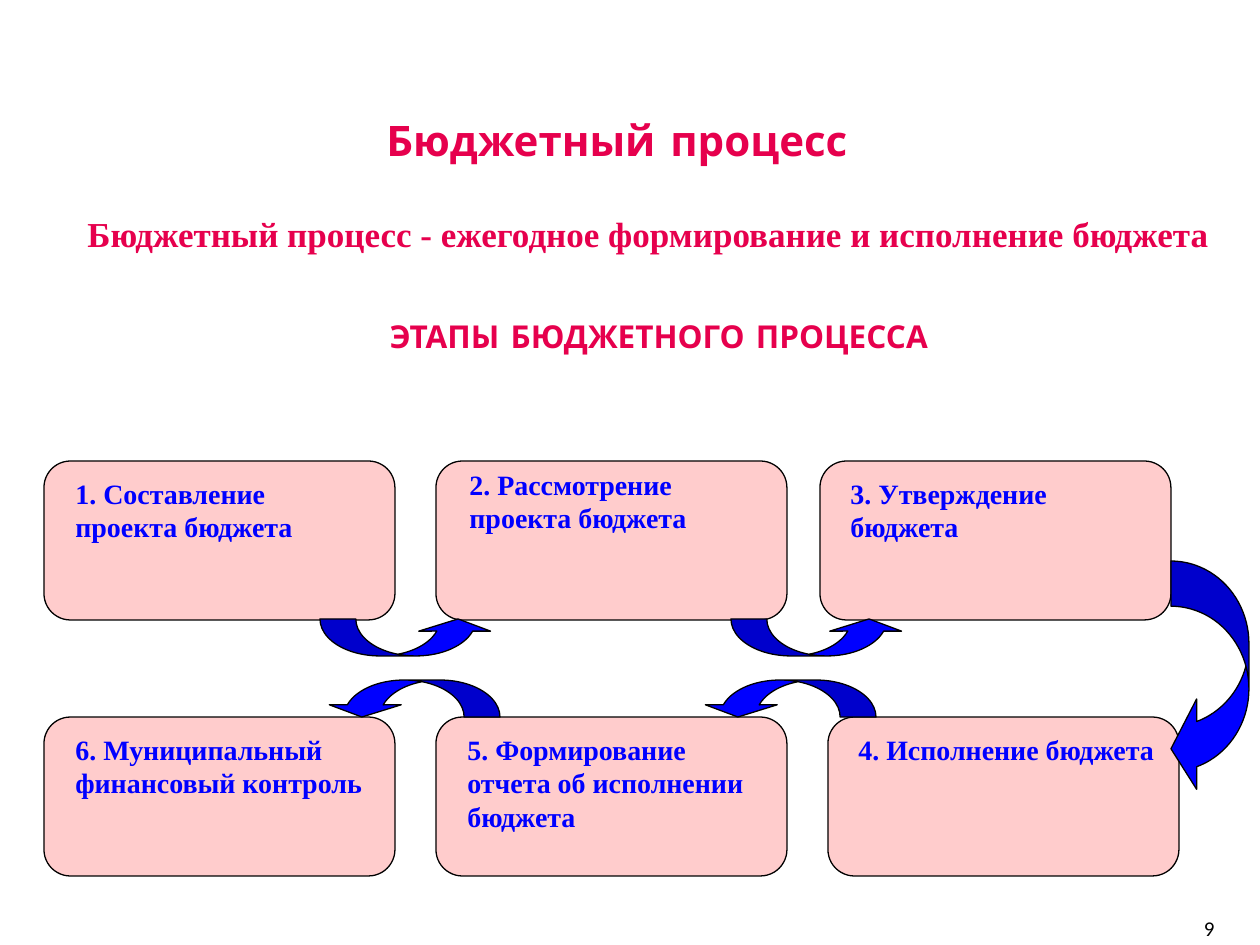
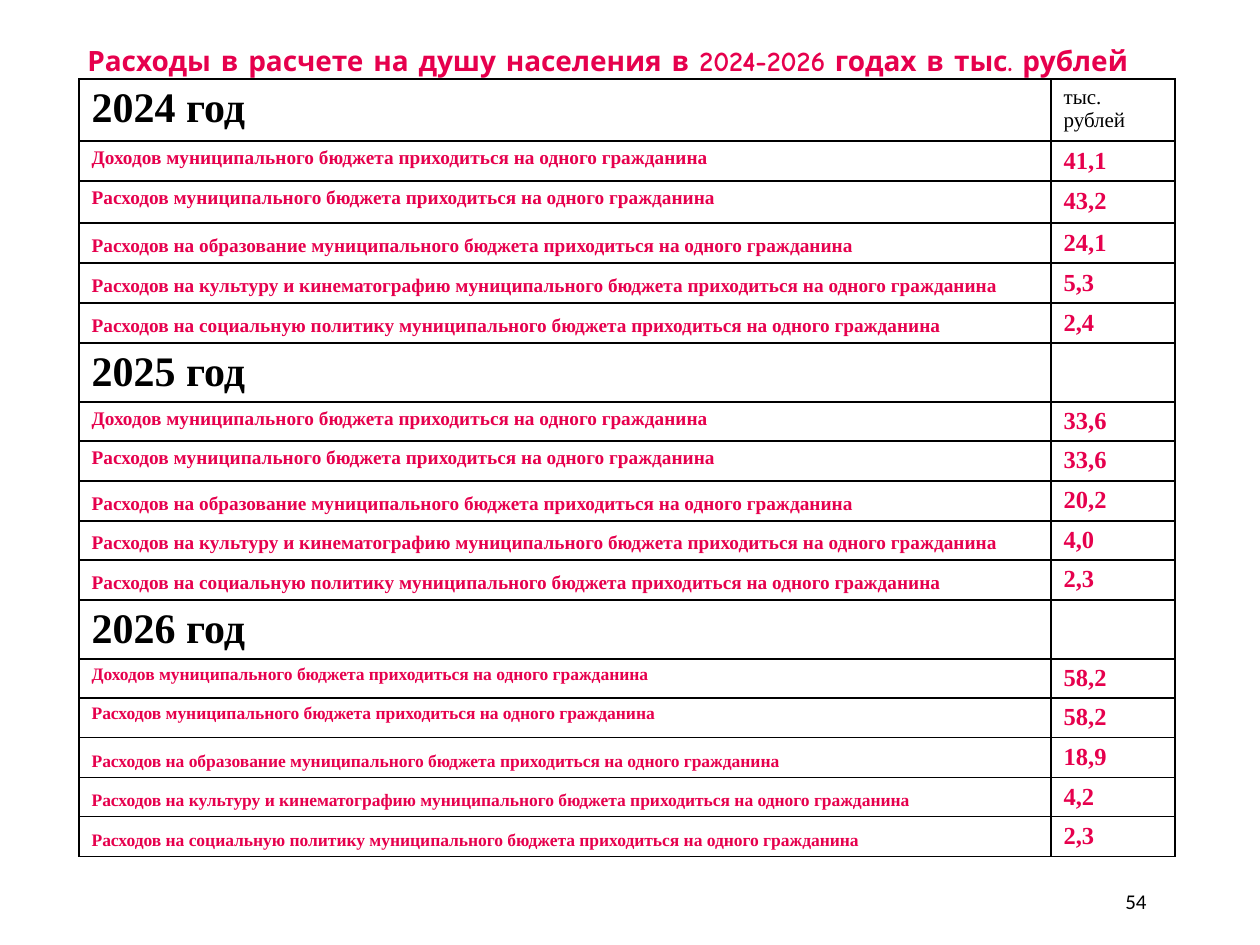
"""Builds two slides on the budget process and spending per resident."""
from lxml import etree
from pptx import Presentation
from pptx.dml.color import RGBColor
from pptx.enum.shapes import MSO_SHAPE
from pptx.enum.text import MSO_ANCHOR, PP_ALIGN
from pptx.oxml.ns import qn
from pptx.util import Pt

PX = 914400 / 126
COLORS = {"accent": "E6004D", "stage": "FFCCCC", "blue": "0000FF",
          "black": "000000", "white": "FFFFFF"}
SERIF, DISPLAY, NUMBER = "Times New Roman", "Comic Neue", "Calibri"
LEFT, CENTER, RIGHT = PP_ALIGN.LEFT, PP_ALIGN.CENTER, PP_ALIGN.RIGHT
TOP, MIDDLE, BOTTOM = MSO_ANCHOR.TOP, MSO_ANCHOR.MIDDLE, MSO_ANCHOR.BOTTOM
STAGE = MSO_SHAPE.FLOWCHART_ALTERNATE_PROCESS
UP_ARROW, LEFT_ARROW = MSO_SHAPE.CURVED_UP_ARROW, MSO_SHAPE.CURVED_LEFT_ARROW

STAGE_W, STAGE_H = 351, 159
STAGES = [
    (44, 0, "1. Составление проекта бюджета", (19, 9)),
    (436, 0, "2. Рассмотрение проекта бюджета", (21, 0)),
    (820, 0, "3. Утверждение бюджета", (18, 9)),
    (828, 256, "4. Исполнение бюджета", (18, 9)),
    (436, 256, "5. Формирование отчета об исполнении бюджета", (19, 9)),
    (44, 256, "6. Муниципальный финансовый контроль", (19, 9)),
]
UP_ADJ, LEFT_ADJ = (0.97, 1.94, 0.33), (0.58, 1.16, 0.33)
ARROWS = [
    (UP_ARROW, (320, 158, 174, 37), UP_ADJ, 0),
    (UP_ARROW, (731, 158, 174, 37), UP_ADJ, 0),
    (LEFT_ARROW, (1171, 100, 78, 233), LEFT_ADJ, 0),
    (UP_ARROW, (702, 219, 174, 37), UP_ADJ, 180),
    (UP_ARROW, (326, 219, 174, 37), UP_ADJ, 180),
]
INDICATORS = [
    "Доходов муниципального бюджета",
    "Расходов муниципального бюджета",
    "Расходов на образование муниципального бюджета",
    "Расходов на культуру и кинематографию муниципального бюджета",
    "Расходов на социальную политику муниципального бюджета",
]
PER_RESIDENT = "приходиться на одного гражданина"
YEARS = [
    ("2024 год", "тыс. рублей", 11, ["41,1", "43,2", "24,1", "5,3", "2,4"]),
    ("2025 год", "", 11, ["33,6", "33,6", "20,2", "4,0", "2,3"]),
    ("2026 год", "", 10, ["58,2", "58,2", "18,9", "4,2", "2,3"]),
]
ROW_HEIGHTS = [62, 40, 42, 40, 40, 40] + [59, 39, 40, 40, 39, 40] * 2
TIGHT_MARGIN = 2


def emu(*lengths):
    """Turn px lengths into EMU."""
    return [round(n * PX) for n in lengths]


def rgb(name):
    """Look up a palette colour."""
    return RGBColor.from_string(COLORS[name])


def write(tf, text, size, color, font=SERIF, bold=True, align=LEFT):
    """Fill a text frame with one formatted paragraph."""
    tf.word_wrap = True
    tf.text = text
    p = tf.paragraphs[0]
    p.alignment = align
    for r in p.runs:
        r.font.size, r.font.bold, r.font.name = Pt(size), bold, font
        r.font.color.rgb = rgb(color)


def add_text(slide, box, text, size, color, anchor=TOP, **style):
    """Add a text box."""
    tf = slide.shapes.add_textbox(*emu(*box)).text_frame
    write(tf, text, size, color, **style)
    tf.vertical_anchor = anchor


def add_heading(slide, box, text, size, align=LEFT):
    """Add a heading in the display font."""
    add_text(slide, box, text, size, "accent", font=DISPLAY, align=align)


def add_page_number(slide, box, number):
    """Add the page number."""
    add_text(slide, box, number, 12, "black", anchor=MIDDLE,
             font=NUMBER, bold=False, align=RIGHT)


def add_outlined(slide, kind, box, fill):
    """Add a filled preset shape with a thin black outline."""
    sp = slide.shapes.add_shape(kind, *emu(*box))
    sp.shadow.inherit = False
    sp.fill.solid()
    sp.fill.fore_color.rgb = rgb(fill)
    sp.line.color.rgb = rgb("black")
    sp.line.width = Pt(0.75)
    return sp


def add_cycle(slide, top):
    """Place the six stages and the arrows between them."""
    for left, down, text, (dx, dy) in STAGES:
        y = top + down
        add_outlined(slide, STAGE, (left, y, STAGE_W, STAGE_H), "stage")
        add_text(slide, (left + dx, y + dy, 322, 100), text, 16, "blue")
    for kind, (left, down, w, h), adjustments, rotation in ARROWS:
        sp = add_outlined(slide, kind, (left, top + down, w, h), "blue")
        sp.rotation = rotation
        for i, value in enumerate(adjustments):
            sp.adjustments[i] = value


def style_cell(cell):
    """Give a cell a white fill and black borders."""
    tc_pr = cell._tc.get_or_add_tcPr()
    for side in ("a:lnL", "a:lnR", "a:lnT", "a:lnB"):
        ln = etree.SubElement(tc_pr, qn(side), w=str(Pt(1)))
        fill = etree.SubElement(ln, qn("a:solidFill"))
        etree.SubElement(fill, qn("a:srgbClr"), val=COLORS["black"])
    cell.fill.solid()
    cell.fill.fore_color.rgb = rgb("white")


def write_tight(cell, text, size, color, bold=True):
    """Write a cell that leaves little room below its text."""
    write(cell.text_frame, text, size, color, bold=bold)
    cell.margin_bottom = emu(TIGHT_MARGIN)[0]


def add_year(table, start, year, unit, size, values):
    """Fill the rows of one year."""
    write_tight(table.cell(start, 0), year, 24, "black")
    write_tight(table.cell(start, 1), unit, 12, "black", bold=False)
    for i, (indicator, value) in enumerate(zip(INDICATORS, values)):
        label, amount = table.cell(start + 1 + i, 0), table.cell(start + 1 + i, 1)
        write(label.text_frame, f"{indicator} {PER_RESIDENT}", size, "accent")
        label.vertical_anchor = TOP if i < 2 else BOTTOM
        write_tight(amount, value, 14, "accent")


def add_spending_table(slide, left, top):
    """Add the table of amounts per resident."""
    widths = (972, 124)
    frame = slide.shapes.add_table(len(ROW_HEIGHTS), 2, *emu(
        left, top, sum(widths), sum(ROW_HEIGHTS)))
    table = frame.table
    table.first_row = table.horz_banding = False
    for column, width in zip(table.columns, widths):
        column.width = emu(width)[0]
    for row, height in zip(table.rows, ROW_HEIGHTS):
        row.height = emu(height)[0]
    for cell in table.iter_cells():
        style_cell(cell)
    for i, year in enumerate(YEARS):
        add_year(table, i * (len(INDICATORS) + 1), *year)


def build_process(slide):
    """Build the budget process slide."""
    add_heading(slide, (255, 311, 808, 88), "ЭТАПЫ БЮДЖЕТНОГО ПРОЦЕССА", 18, CENTER)
    add_cycle(slide, 461)
    add_heading(slide, (374, 108, 645, 70), "Бюджетный процесс", 24)
    add_text(slide, (75, 206, 1170, 69),
             "Бюджетный процесс - ежегодное формирование и исполнение бюджета",
             20, "accent")
    add_page_number(slide, (1122, 911, 105, 34), "9")


def build_spending(slide):
    """Build the spending per resident slide."""
    add_spending_table(slide, 79, 79)
    add_heading(slide, (75, 37, 1072, 50),
                "Расходы в расчете на душу населения в 2024-2026 годах в тыс. рублей", 16)
    add_page_number(slide, (875, 876, 284, 50), "54")


def main():
    """Build and save the presentation."""
    prs = Presentation()
    prs.slide_width, prs.slide_height = emu(1260, 945)
    for build in (build_process, build_spending):
        build(prs.slides.add_slide(prs.slide_layouts[6]))
    prs.save("out.pptx")


if __name__ == "__main__":
    main()
